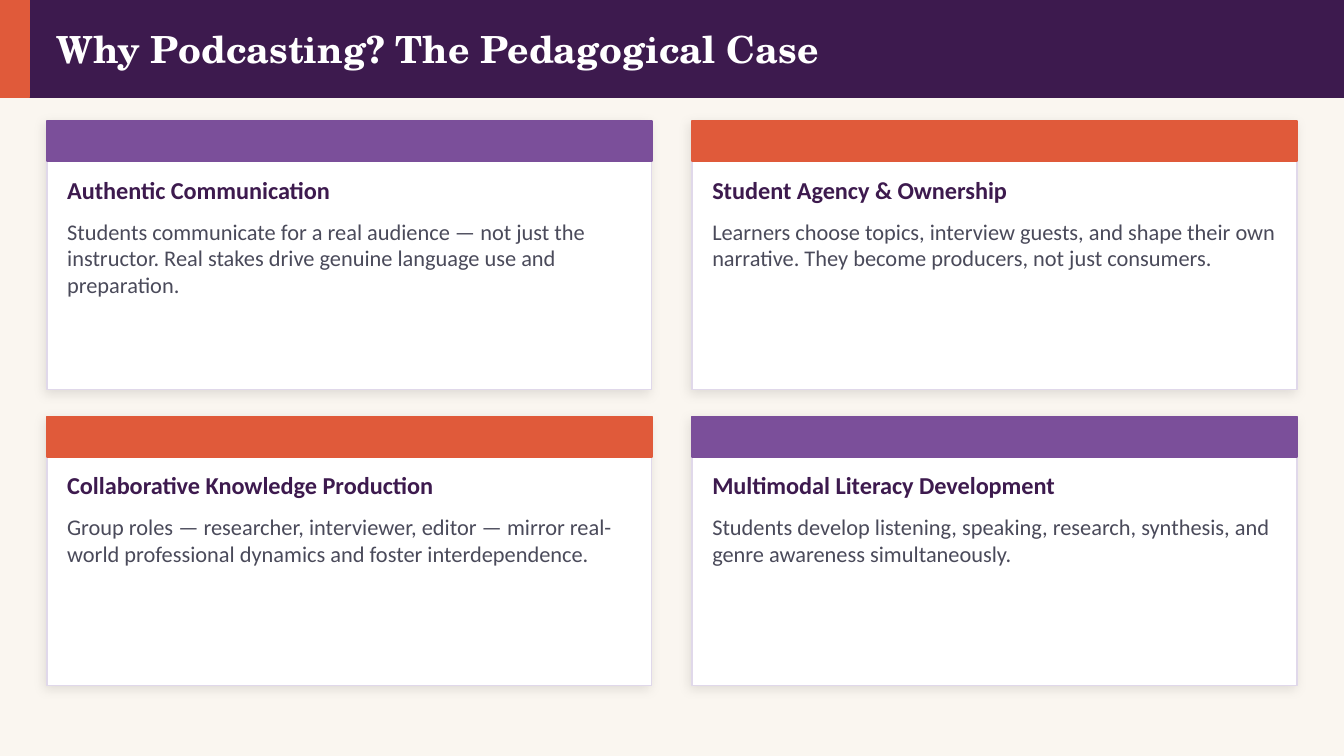
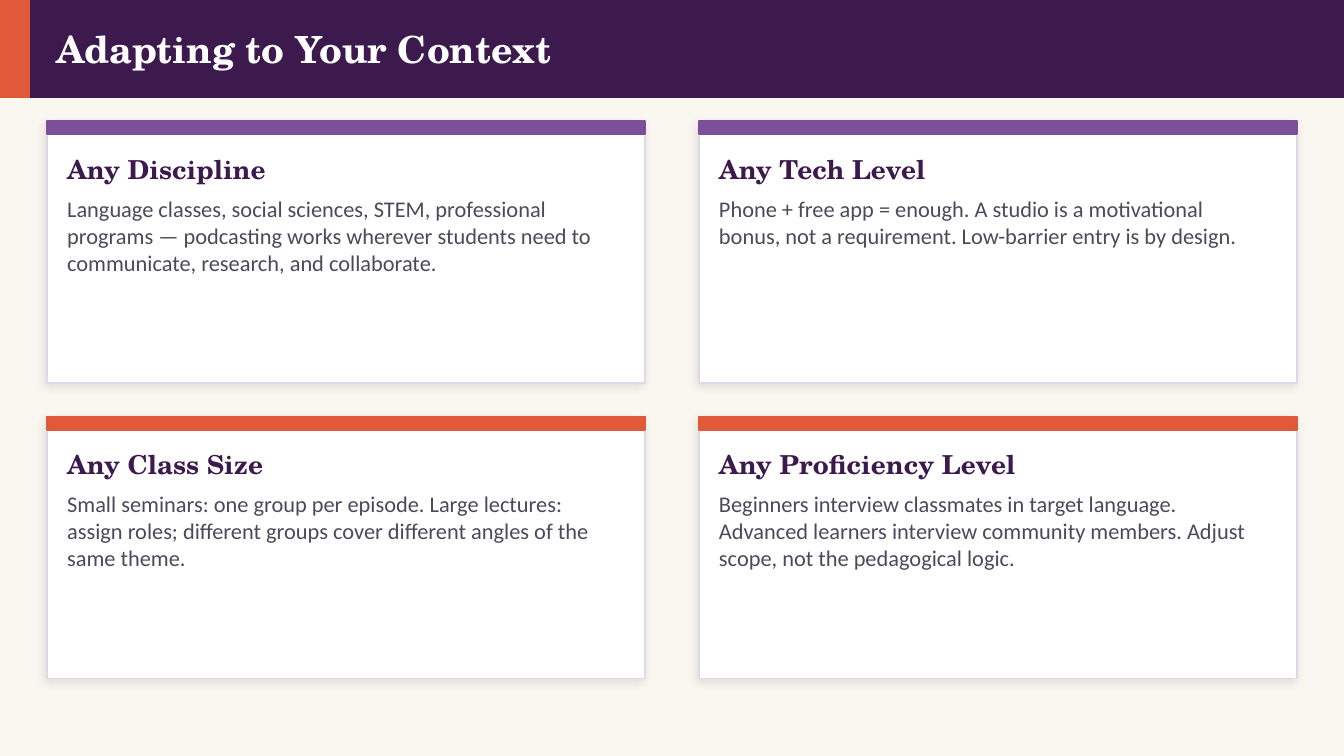
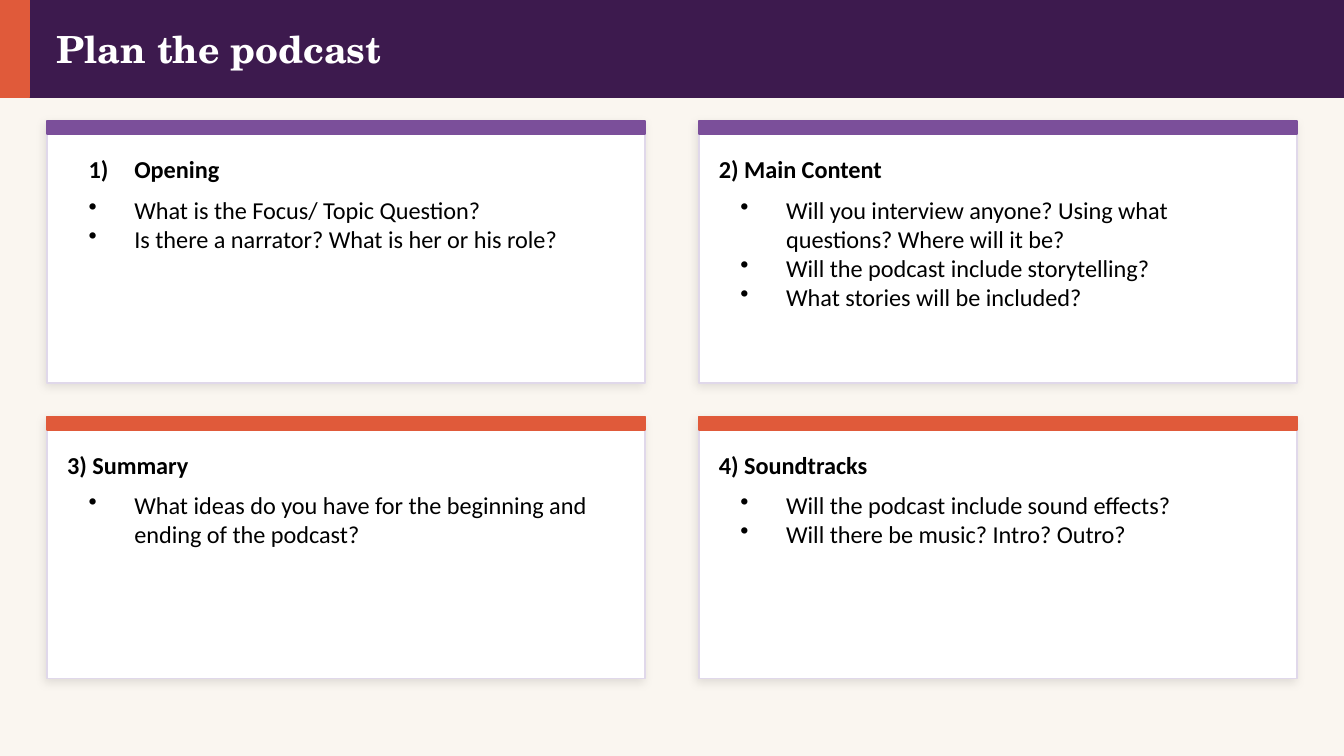
from dataclasses import dataclass, replace

from lxml.etree import SubElement
from pptx import Presentation
from pptx.dml.color import RGBColor
from pptx.enum.shapes import MSO_SHAPE
from pptx.enum.text import MSO_ANCHOR, MSO_AUTO_SIZE, PP_ALIGN
from pptx.oxml.ns import qn
from pptx.util import Inches, Pt

COLORS = {
    "cream": "FAF6F0",
    "plum": "3D1A4E",
    "purple": "7B4F9A",
    "orange": "E05A3A",
    "lilac": "E0D8EA",
    "slate": "4A4A5A",
    "white": "FFFFFF",
    "black": "000000",
}
SERIF = "TeX Gyre Schola"
SANS = "Calibri"

SLIDE_WIDTH = 10
SLIDE_HEIGHT = SLIDE_WIDTH * 9 / 16
MARGIN = 0.35
GRID_TOP = 0.9
ROW_PITCH = 2.2
CARD_PADDING = 0.15
TEXT_GAP = 0.02


@dataclass
class Box:
    left: float
    top: float
    width: float
    height: float

    def lengths(self):
        return [Inches(side) for side in (self.left, self.top, self.width, self.height)]


@dataclass
class TextStyle:
    font: str
    size: int
    color: str
    bold: bool = False


@dataclass
class CardStyle:
    width: float
    height: float
    text_width: float
    strip_height: float
    heading_gap: float
    heading_height: float
    body_height: float
    shadow_opacity: int
    shadow_blur: int
    heading: TextStyle
    body: TextStyle
    strips: tuple
    bulleted: bool = False


@dataclass
class Card:
    heading: str
    lines: list
    numbered: bool = False


TITLE_STYLE = TextStyle(SERIF, 20, "white", True)
BODY_STYLE = TextStyle(SANS, 12, "slate")

REASON_CARDS = CardStyle(
    width=4.5, height=2, text_width=4.2, strip_height=0.3,
    heading_gap=0.02, heading_height=0.38, body_height=1.15,
    shadow_opacity=10, shadow_blur=6,
    heading=TextStyle(SANS, 13, "plum", True), body=BODY_STYLE,
    strips=("purple", "orange", "orange", "purple"),
)
CONTEXT_CARDS = CardStyle(
    width=4.45, height=1.95, text_width=4.1, strip_height=0.1,
    heading_gap=0.08, heading_height=0.35, body_height=1.25,
    shadow_opacity=9, shadow_blur=5,
    heading=TextStyle(SERIF, 14, "plum", True), body=BODY_STYLE,
    strips=("purple", "purple", "orange", "orange"),
)
PLAN_CARDS = replace(
    CONTEXT_CARDS,
    heading=TextStyle(SANS, 13, "black", True),
    body=TextStyle(SANS, 13, "black"),
    bulleted=True,
)

SLIDES = [
    ("Why Podcasting? The Pedagogical Case", REASON_CARDS, [
        Card("Authentic Communication", [
            "Students communicate for a real audience — not just the instructor. "
            "Real stakes drive genuine language use and preparation."]),
        Card("Student Agency & Ownership", [
            "Learners choose topics, interview guests, and shape their own narrative. "
            "They become producers, not just consumers."]),
        Card("Collaborative Knowledge Production", [
            "Group roles — researcher, interviewer, editor — mirror real-world "
            "professional dynamics and foster interdependence."]),
        Card("Multimodal Literacy Development", [
            "Students develop listening, speaking, research, synthesis, and genre "
            "awareness simultaneously."]),
    ]),
    ("Adapting to Your Context", CONTEXT_CARDS, [
        Card("Any Discipline", [
            "Language classes, social sciences, STEM, professional programs — podcasting "
            "works wherever students need to communicate, research, and collaborate."]),
        Card("Any Tech Level", [
            "Phone + free app = enough. A studio is a motivational bonus, not a "
            "requirement. Low-barrier entry is by design."]),
        Card("Any Class Size", [
            "Small seminars: one group per episode. Large lectures: assign roles; "
            "different groups cover different angles of the same theme."]),
        Card("Any Proficiency Level", [
            "Beginners interview classmates in target language. Advanced learners "
            "interview community members. Adjust scope, not the pedagogical logic."]),
    ]),
    ("Plan the podcast", PLAN_CARDS, [
        Card("Opening", [
            "What is the Focus/ Topic Question?",
            "Is there a narrator? What is her or his role?"], numbered=True),
        Card("2) Main Content", [
            "Will you interview anyone? Using what questions? Where will it be?",
            "Will the podcast include storytelling?",
            "What stories will be included?"]),
        Card("3) Summary", [
            "What ideas do you have for the beginning and ending of the podcast?"]),
        Card("4) Soundtracks", [
            "Will the podcast include sound effects?",
            "Will there be music? Intro? Outro?"]),
    ]),
]


def rgb(name):
    return RGBColor.from_string(COLORS[name])


def add_rectangle(slide, box, fill, line=None, line_width=1):
    shape = slide.shapes.add_shape(MSO_SHAPE.RECTANGLE, *box.lengths())
    shape.shadow.inherit = False
    shape.fill.solid()
    shape.fill.fore_color.rgb = rgb(fill)
    shape.line.color.rgb = rgb(line or fill)
    shape.line.width = Pt(line_width)
    return shape


def add_soft_shadow(shape, opacity, blur):
    effects = shape.element.spPr.find(qn("a:effectLst"))
    shadow = SubElement(
        effects, qn("a:outerShdw"), blurRad=str(Pt(blur)), dist=str(Pt(2)),
        dir=str(135 * 60000), algn="bl", rotWithShape="0")
    color = SubElement(shadow, qn("a:srgbClr"), val=COLORS["black"])
    SubElement(color, qn("a:alpha"), val=str(opacity * 1000))


def add_marker(paragraph, tag, **attributes):
    properties = paragraph._p.get_or_add_pPr()
    properties.set("marL", str(Inches(0.5)))
    properties.set("indent", str(Inches(-0.34)))
    color = SubElement(properties, qn("a:buClr"))
    SubElement(color, qn("a:srgbClr"), val=COLORS["black"])
    SubElement(properties, qn(tag), **attributes)


def write_text(shape, lines, style, anchor):
    frame = shape.text_frame
    frame.word_wrap = True
    frame.auto_size = MSO_AUTO_SIZE.NONE
    frame.vertical_anchor = anchor
    frame.margin_left = frame.margin_top = frame.margin_right = frame.margin_bottom = 0
    for index, line in enumerate(lines):
        paragraph = frame.add_paragraph() if index else frame.paragraphs[0]
        paragraph.alignment = PP_ALIGN.LEFT
        run = paragraph.add_run()
        run.text = line
        run.font.name = style.font
        run.font.size = Pt(style.size)
        run.font.bold = style.bold
        run.font.color.rgb = rgb(style.color)
    return frame.paragraphs


def add_title_band(slide, box, text):
    title = slide.shapes.title
    band = add_rectangle(slide, box, "plum")
    accent = add_rectangle(slide, replace(box, width=0.22), "orange")
    for shape in (band, accent):
        title.element.addprevious(shape.element)
    title_box = replace(box, left=box.left + 0.42, width=box.width - 0.7)
    title.left, title.top, title.width, title.height = title_box.lengths()
    write_text(title, [text], TITLE_STYLE, MSO_ANCHOR.MIDDLE)


def add_card(slide, box, card, style, strip_color):
    panel = add_rectangle(slide, box, "white", "lilac", 0.75)
    add_soft_shadow(panel, style.shadow_opacity, style.shadow_blur)
    add_rectangle(slide, replace(box, height=style.strip_height), strip_color)

    heading_box = Box(
        box.left + CARD_PADDING, box.top + style.strip_height + style.heading_gap,
        style.text_width, style.heading_height)
    body_box = replace(
        heading_box, top=heading_box.top + style.heading_height + TEXT_GAP,
        height=style.body_height)
    heading = slide.shapes.add_textbox(*heading_box.lengths())
    body = slide.shapes.add_textbox(*body_box.lengths())
    headings = write_text(heading, [card.heading], style.heading, MSO_ANCHOR.MIDDLE)
    paragraphs = write_text(body, card.lines, style.body, MSO_ANCHOR.TOP)
    if card.numbered:
        add_marker(headings[0], "a:buAutoNum", type="arabicParenR")
    if style.bulleted:
        for paragraph in paragraphs:
            add_marker(paragraph, "a:buChar", char="•")


def add_card_grid(slide, box, cards, style):
    column_pitch = box.width - style.width
    for index, (card, strip_color) in enumerate(zip(cards, style.strips)):
        row, column = divmod(index, 2)
        card_box = Box(
            box.left + column * column_pitch, box.top + row * ROW_PITCH,
            style.width, style.height)
        add_card(slide, card_box, card, style, strip_color)


def add_card_slide(presentation, title, style, cards):
    slide = presentation.slides.add_slide(presentation.slide_layouts.get_by_name("Title Only"))
    add_title_band(slide, Box(0, 0, SLIDE_WIDTH, 0.72), title)
    grid_box = Box(MARGIN, GRID_TOP, SLIDE_WIDTH - 2 * MARGIN, ROW_PITCH + style.height)
    add_card_grid(slide, grid_box, cards, style)


def main():
    presentation = Presentation()
    presentation.slide_width = Inches(SLIDE_WIDTH)
    presentation.slide_height = Inches(SLIDE_HEIGHT)
    background = presentation.slide_master.background.fill
    background.solid()
    background.fore_color.rgb = rgb("cream")
    for title, style, cards in SLIDES:
        add_card_slide(presentation, title, style, cards)
    presentation.save("out.pptx")


if __name__ == "__main__":
    main()
